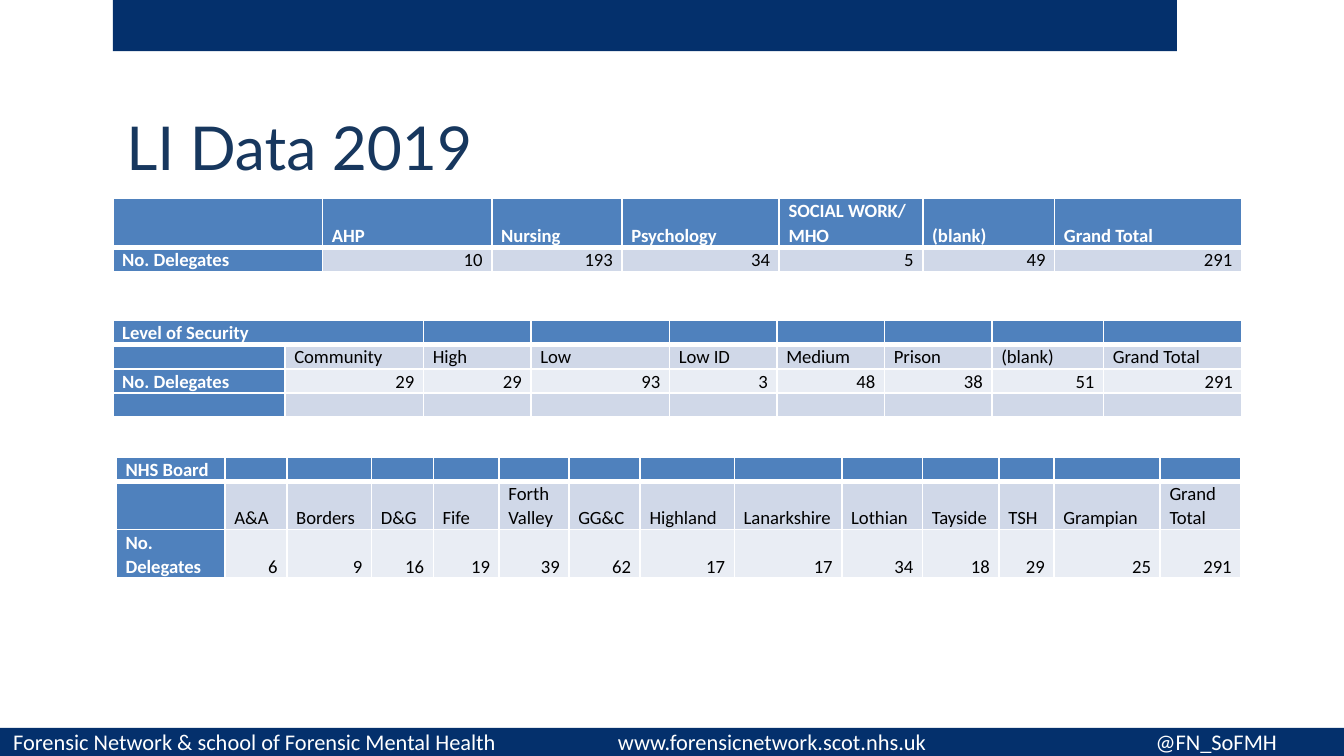
from lxml.etree import SubElement
from pptx import Presentation
from pptx.dml.color import RGBColor
from pptx.enum.shapes import MSO_SHAPE as Preset
from pptx.enum.text import MSO_ANCHOR as Anchor, MSO_AUTO_SIZE as AutoSize, PP_ALIGN as Align
from pptx.oxml.ns import qn
from pptx.util import Pt

NAVY = RGBColor(0x04, 0x30, 0x6C)
TITLE_BLUE = RGBColor(0x17, 0x37, 0x5E)
HEADER_BLUE = RGBColor(0x4F, 0x81, 0xBD)
BAND_DARK = RGBColor(0xD0, 0xD8, 0xE8)
BAND_LIGHT = RGBColor(0xE9, 0xED, 0xF4)
WHITE = RGBColor(0xFF, 0xFF, 0xFF)
BLACK = RGBColor(0, 0, 0)

TABLES = [
    {
        "left": 60.5, "top": 106.4, "heights": [26, 13],
        "widths": [112.3, 90.7, 69.8, 84.2, 77, 70.6, 100.1],
        "rows": [
            ["", "AHP", "Nursing", "Psychology", "SOCIAL WORK/ MHO", "(blank)", "Grand Total"],
            ["No. Delegates", "10", "193", "34", "5", "49", "291"],
        ],
    },
    {
        "left": 60.5, "top": 171.6, "heights": [13, 13, 13, 13],
        "widths": [92.2, 74.2, 57.6, 74.2, 57.6, 57.6, 57.6, 59.8, 74.2],
        "rows": [
            ["Level of Security"] + [""] * 8,
            ["", "Community", "High", "Low", "Low ID", "Medium", "Prison", "(blank)", "Grand Total"],
            ["No. Delegates", "29", "29", "93", "3", "48", "38", "51", "291"],
            [""] * 9,
        ],
    },
    {
        "left": 62.3, "top": 244.8, "heights": [13, 26, 26],
        "widths": [58.3, 33.1, 45.4, 33.1, 35.3, 37.4, 38.2, 50.4, 57.6, 43.2, 41, 29.5, 56.9, 43.2],
        "rows": [
            ["NHS Board"] + [""] * 13,
            ["", "A&A", "Borders", "D&G", "Fife", "Forth Valley", "GG&C", "Highland",
             "Lanarkshire", "Lothian", "Tayside", "TSH", "Grampian", "Grand Total"],
            ["No. Delegates", "6", "9", "16", "19", "39", "62", "17", "17", "34", "18", "29", "25", "291"],
        ],
    },
]


def add_bar(slide, left, top, width, height):
    shape = slide.shapes.add_shape(Preset.RECTANGLE, Pt(left), Pt(top), Pt(width), Pt(height))
    shape.shadow.inherit = False
    shape.fill.solid()
    shape.fill.fore_color.rgb = NAVY
    shape.line.fill.background()
    return shape


def add_borders(cell, top_width, bottom_width):
    properties = cell._tc.get_or_add_tcPr()
    for side, width in (("L", 1), ("R", 1), ("T", top_width), ("B", bottom_width)):
        line = SubElement(properties, qn("a:ln" + side), w=str(Pt(width)))
        fill = SubElement(line, qn("a:solidFill"))
        SubElement(fill, qn("a:srgbClr"), val=str(WHITE))


presentation = Presentation()
presentation.slide_width = Pt(720)
presentation.slide_height = Pt(405)
slide = presentation.slides.add_slide(presentation.slide_layouts[5])

add_bar(slide, 60.5, 0, 570, 27.4)

footer = add_bar(slide, 0, 390, 720, 15)
footer.text_frame.vertical_anchor = Anchor.MIDDLE
paragraph = footer.text_frame.paragraphs[0]
paragraph.text = "Forensic Network & school of Forensic Mental Health\twww.forensicnetwork.scot.nhs.uk\t@FN_SoFMH"
paragraph.alignment = Align.LEFT
tab_stops = SubElement(paragraph._p.get_or_add_pPr(), qn("a:tabLst"))
for position in (324, 612):
    SubElement(tab_stops, qn("a:tab"), pos=str(Pt(position)), algn="l")
for run in paragraph.runs:
    run.font.name = "Calibri"
    run.font.size = Pt(12)
    run.font.color.rgb = WHITE

title = slide.shapes.title
title.left, title.top, title.width, title.height = Pt(60.5), Pt(55.4), Pt(604.8), Pt(41)
title.text_frame.text = "LI Data 2019"
title.text_frame.auto_size = AutoSize.NONE
title.text_frame.vertical_anchor = Anchor.TOP
paragraph = title.text_frame.paragraphs[0]
paragraph.alignment = Align.LEFT
font = paragraph.runs[0].font
font.name = "Lato"
font.size = Pt(32.4)
font.color.rgb = TITLE_BLUE

for data in TABLES:
    rows, widths, heights = data["rows"], data["widths"], data["heights"]
    frame = slide.shapes.add_table(len(rows), len(widths), Pt(data["left"]), Pt(data["top"]),
                                   Pt(sum(widths)), Pt(sum(heights)))
    table = frame.table
    for column, width in zip(table.columns, widths):
        column.width = Pt(width)
    for row, height in zip(table.rows, heights):
        row.height = Pt(height)
    for row_index, texts in enumerate(rows):
        for column_index, text in enumerate(texts):
            cell = table.cell(row_index, column_index)
            is_header = row_index == 0 or column_index == 0
            add_borders(cell, 3 if row_index == 1 else 1, 3 if row_index == 0 else 1)
            cell.fill.solid()
            cell.fill.fore_color.rgb = HEADER_BLUE if is_header else BAND_DARK if row_index % 2 else BAND_LIGHT
            cell.margin_left = cell.margin_right = Pt(5)
            cell.margin_top = cell.margin_bottom = 0
            cell.vertical_anchor = Anchor.BOTTOM
            paragraph = cell.text_frame.paragraphs[0]
            paragraph.line_spacing = 1.07
            if not text:
                SubElement(paragraph._p, qn("a:endParaRPr"), sz="1000")
                continue
            paragraph.text = text
            paragraph.alignment = Align.RIGHT if text.isdigit() else Align.LEFT
            font = paragraph.runs[0].font
            font.name = "Calibri"
            font.size = Pt(10)
            font.bold = is_header
            font.color.rgb = WHITE if is_header else BLACK
    if rows[0][0] == "Level of Security":
        table.cell(0, 0).merge(table.cell(0, 1))
    if rows[0][0] == "NHS Board":
        table.cell(1, len(widths) - 1).vertical_anchor = Anchor.TOP

presentation.save("out.pptx")
